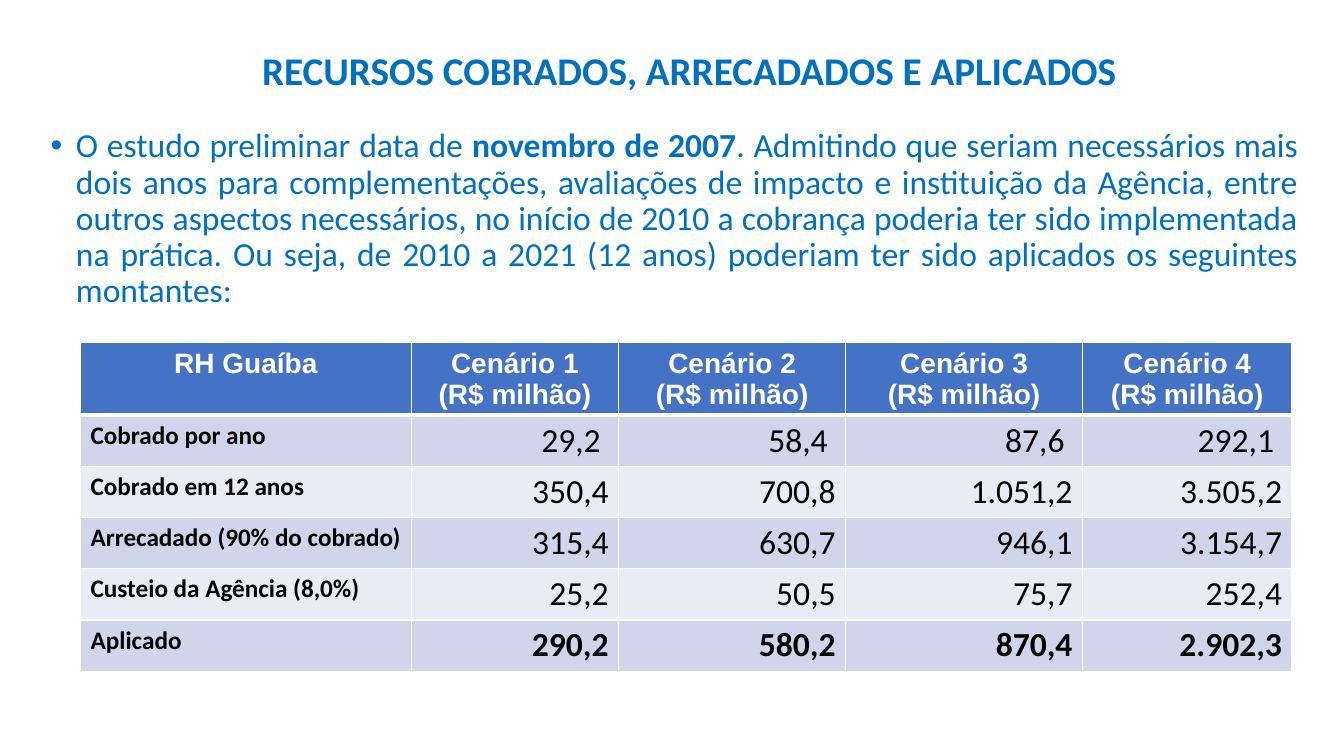
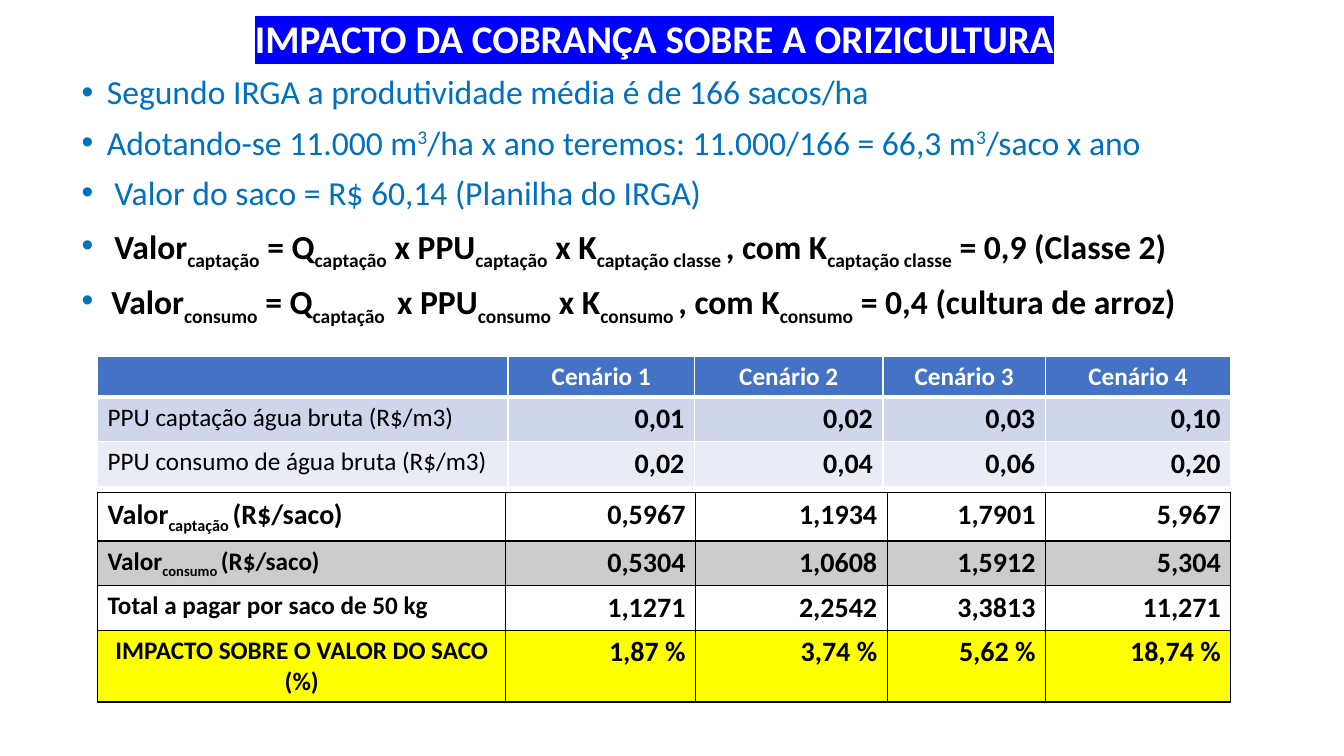
from dataclasses import dataclass

from lxml import etree
from pptx import Presentation
from pptx import util as u
from pptx.dml.color import RGBColor
from pptx.enum import text as t
from pptx.oxml import ns

# Colours
BLUE = RGBColor(0x00, 0x70, 0xC0)
HIGHLIGHT = RGBColor(0x00, 0x00, 0xFF)
HEADER = RGBColor(0x44, 0x72, 0xC4)
BAND_DARK = RGBColor(0xCF, 0xD5, 0xEA)
BAND_LIGHT = RGBColor(0xE9, 0xEB, 0xF5)
YELLOW = RGBColor(0xFF, 0xFF, 0x00)
WHITE = RGBColor(0xFF, 0xFF, 0xFF)
BLACK = RGBColor(0x00, 0x00, 0x00)

LEFT, CENTER, RIGHT, JUSTIFY = (
    t.PP_ALIGN.LEFT, t.PP_ALIGN.CENTER, t.PP_ALIGN.RIGHT, t.PP_ALIGN.JUSTIFY)


def write(paragraph, wording, size=24, color=BLACK, bold=False, font="Calibri",
          shift=-25, highlight=None):
    """Add runs; parts between bars are raised or lowered by shift percent."""
    for position, part in enumerate(wording.split("|")):
        if not part:
            continue
        run = paragraph.add_run()
        run.text = part
        run.font.size = u.Pt(size)
        run.font.bold = bold
        run.font.name = font
        run.font.color.rgb = color
        properties = run.font._element
        if position % 2:
            properties.set("baseline", str(shift * 1000))
        if highlight is not None:
            marker = etree.Element(ns.qn("a:highlight"))
            etree.SubElement(marker, ns.qn("a:srgbClr"), val=str(highlight))
            properties.find(ns.qn("a:solidFill")).addnext(marker)


def set_borders(cell, color, top, bottom):
    """Draw the four cell borders; the sides are one point wide."""
    widths = {"lnL": 1, "lnR": 1, "lnT": top, "lnB": bottom}
    properties = cell._tc.get_or_add_tcPr()
    for position, (side, width) in enumerate(widths.items()):
        line = etree.Element(ns.qn("a:" + side), w=str(u.Pt(width)))
        fill = etree.SubElement(line, ns.qn("a:solidFill"))
        etree.SubElement(fill, ns.qn("a:srgbClr"), val=str(color))
        properties.insert(position, line)


@dataclass
class Row:
    label: str
    values: list
    fill: RGBColor = None
    alpha: int = 100
    label_size: int = 18
    value_size: int = 20
    label_bold: bool = True
    value_bold: bool = True
    label_align: int = LEFT
    value_align: int = RIGHT
    color: RGBColor = BLACK
    font: str = "Calibri"
    right_margin: float = 0.25
    bottom_margin: float = 0.13


def header(label, values, **options):
    return Row(label, values, HEADER, label_align=CENTER, value_align=CENTER,
               color=WHITE, **options)


class Deck:
    def __init__(self):
        self.presentation = Presentation()
        self.presentation.slide_width = u.Cm(33.87)
        self.presentation.slide_height = u.Cm(19.05)
        self.slide = None

    def new_slide(self):
        layout = self.presentation.slide_layouts[1]
        self.slide = self.presentation.slides.add_slide(layout)

    def place(self, placeholder, at, anchor):
        placeholder.left, placeholder.top, placeholder.width, placeholder.height = map(u.Cm, at)
        frame = placeholder.text_frame
        frame.word_wrap = True
        frame.auto_size = t.MSO_AUTO_SIZE.NONE
        frame.vertical_anchor = anchor
        return frame

    def title(self, wording, at, color=BLUE, highlight=None):
        frame = self.place(self.slide.shapes.title, at, t.MSO_ANCHOR.MIDDLE)
        heading = frame.paragraphs[0]
        heading.alignment = LEFT
        heading.line_spacing = 0.9
        write(heading, wording, size=28, color=color, bold=True, highlight=highlight)

    def bullets(self, items, at, align=LEFT):
        """Each item is a list of (wording, format) pairs."""
        frame = self.place(self.slide.placeholders[1], at, t.MSO_ANCHOR.TOP)
        for number, pieces in enumerate(items):
            item = frame.add_paragraph() if number else frame.paragraphs[0]
            item.alignment = align
            item.line_spacing = 0.9
            item.space_before = u.Pt(10)
            properties = item._p.get_or_add_pPr()
            properties.set("marL", str(u.Cm(0.64)))
            properties.set("indent", str(u.Cm(-0.64)))
            for wording, options in pieces:
                write(item, wording, **{"color": BLUE, **options})

    def table(self, rows, left, top, widths, heights, border, heavy):
        """The line under the first row is heavy points wide."""
        table = self.slide.shapes.add_table(
            len(rows), len(widths), u.Cm(left), u.Cm(top),
            u.Cm(sum(widths)), u.Cm(sum(heights))).table
        table.first_row = rows[0].fill == HEADER
        table.horz_banding = False
        for column, width in zip(table.columns, widths):
            column.width = u.Cm(width)
        for number, (row, height) in enumerate(zip(rows, heights)):
            table.rows[number].height = u.Cm(height)
            for column, wording in enumerate([row.label, *row.values]):
                cell = table.cell(number, column)
                self.fill_cell(cell, row, wording, is_label=column == 0)
                set_borders(cell, border, top=heavy if number == 1 else 1,
                            bottom=heavy if number == 0 else 1)

    def fill_cell(self, cell, row, wording, is_label):
        cell.margin_bottom = u.Cm(row.bottom_margin)
        if not is_label:
            cell.margin_right = u.Cm(row.right_margin)
        if row.fill is None:
            cell.fill.background()
        else:
            cell.fill.solid()
            cell.fill.fore_color.rgb = row.fill
            if row.alpha < 100:
                tone = cell._tc.tcPr.find(".//" + ns.qn("a:srgbClr"))
                etree.SubElement(tone, ns.qn("a:alpha"), val=str(row.alpha * 1000))
        for number, line in enumerate(wording.split("\n")):
            paragraph = (cell.text_frame.add_paragraph() if number
                         else cell.text_frame.paragraphs[0])
            paragraph.alignment = row.label_align if is_label else row.value_align
            write(paragraph, line, color=row.color, font=row.font,
                  size=row.label_size if is_label else row.value_size,
                  bold=row.label_bold if is_label else row.value_bold)


def resources_slide(deck):
    deck.new_slide()
    deck.title("RECURSOS COBRADOS, ARRECADADOS E APLICADOS", (6.35, 0.97, 22.23, 1.73))
    deck.bullets([[
        ("O estudo preliminar data de ", {}),
        ("novembro de 2007", {"bold": True}),
        (". Admitindo que seriam necessários mais dois anos para complementações, "
         "avaliações de impacto e instituição da Agência, entre outros aspectos "
         "necessários, no início de 2010 a cobrança poderia ter sido implementada na "
         "prática. Ou seja, de 2010 a 2021 (12 anos) poderiam ter sido aplicados os "
         "seguintes montantes:", {}),
    ]], (1.02, 3.12, 31.95, 14.4), JUSTIFY)

    # Amounts per scenario
    plain = {"value_size": 24, "value_bold": False}
    amounts = [
        header("RH Guaíba", [f"Cenário {n}\n(R$ milhão)" for n in range(1, 5)],
               label_size=20, font="Arial", bottom_margin=0.05),
        Row("Cobrado por ano", ["29,2", "58,4", "87,6", "292,1"], BAND_DARK,
            right_margin=0.45, **plain),
        Row("Cobrado em 12 anos", ["350,4", "700,8", "1.051,2", "3.505,2"],
            BAND_LIGHT, **plain),
        Row("Arrecadado (90% do cobrado)", ["315,4", "630,7", "946,1", "3.154,7"],
            BAND_DARK, **plain),
        Row("Custeio da Agência (8,0%)", ["25,2", "50,5", "75,7", "252,4"],
            BAND_LIGHT, **plain),
        Row("Aplicado", ["290,2", "580,2", "870,4", "2.902,3"], BAND_DARK, value_size=24),
    ]
    deck.table(amounts, 2.03, 8.64, [8.33, 5.23, 5.72, 5.97, 5.28],
               [1.82] + [1.09] * 5, WHITE, heavy=3)


def rice_slide(deck):
    deck.new_slide()
    deck.title("IMPACTO DA COBRANÇA SOBRE A ORIZICULTURA", (6.17, 0.28, 22.15, 1.5),
               WHITE, HIGHLIGHT)
    formula = {"color": BLACK, "bold": True}
    deck.bullets([
        [("Segundo IRGA a produtividade média é de 166 sacos/ha", {})],
        [("Adotando-se 11.000 m|3|/ha x ano teremos: 11.000/166 = 66,3 m|3|/saco x ano",
          {"shift": 30})],
        [(" Valor do saco = R$ 60,14 (Planilha do IRGA)", {})],
        [(" ", {}),
         ("Valor|captação| = Q|captação| x PPU|captação| x K|captação classe |"
          ", com K|captação classe| = 0,9 (Classe 2)", formula)],
        [("| |", {}),
         ("Valor|consumo| = Q|captação | x PPU|consumo| x K|consumo |"
          ", com K|consumo| = 0,4 (cultura de arroz)", formula)],
    ], (1.8, 1.78, 29.74, 16.59))

    # Unit prices
    prices = [
        header("", [f"Cenário {n}" for n in range(1, 5)], value_size=18),
        Row("PPU captação água bruta (R$/m3)", ["0,01", "0,02", "0,03", "0,10"],
            BAND_DARK, label_bold=False),
        Row("PPU consumo de água bruta (R$/m3)", ["0,02", "0,04", "0,06", "0,20"],
            BAND_LIGHT, label_bold=False),
    ]
    deck.table(prices, 2.46, 8.97, [10.34, 4.7, 4.75, 4.09, 4.67],
               [1.04] * 3, WHITE, heavy=3)

    # Cost per sack
    costs = [
        Row("Valor|captação |(R$/saco)", ["0,5967", "1,1934", "1,7901", "5,967"],
            label_size=20),
        Row("Valor|consumo |(R$/saco)", ["0,5304", "1,0608", "1,5912", "5,304"],
            BLACK, alpha=20),
        Row("Total a pagar por saco de 50 kg", ["1,1271", "2,2542", "3,3813", "11,271"]),
        Row("IMPACTO SOBRE O VALOR DO SACO (%)", ["1,87 %", "3,74 %", "5,62 %", "18,74 %"],
            YELLOW, label_align=CENTER),
    ]
    deck.table(costs, 2.46, 12.42, [10.29, 4.78, 4.83, 3.99, 4.67],
               [1.04] * 4, BLACK, heavy=2)


def main():
    deck = Deck()
    resources_slide(deck)
    rice_slide(deck)
    deck.presentation.save("out.pptx")


if __name__ == "__main__":
    main()
